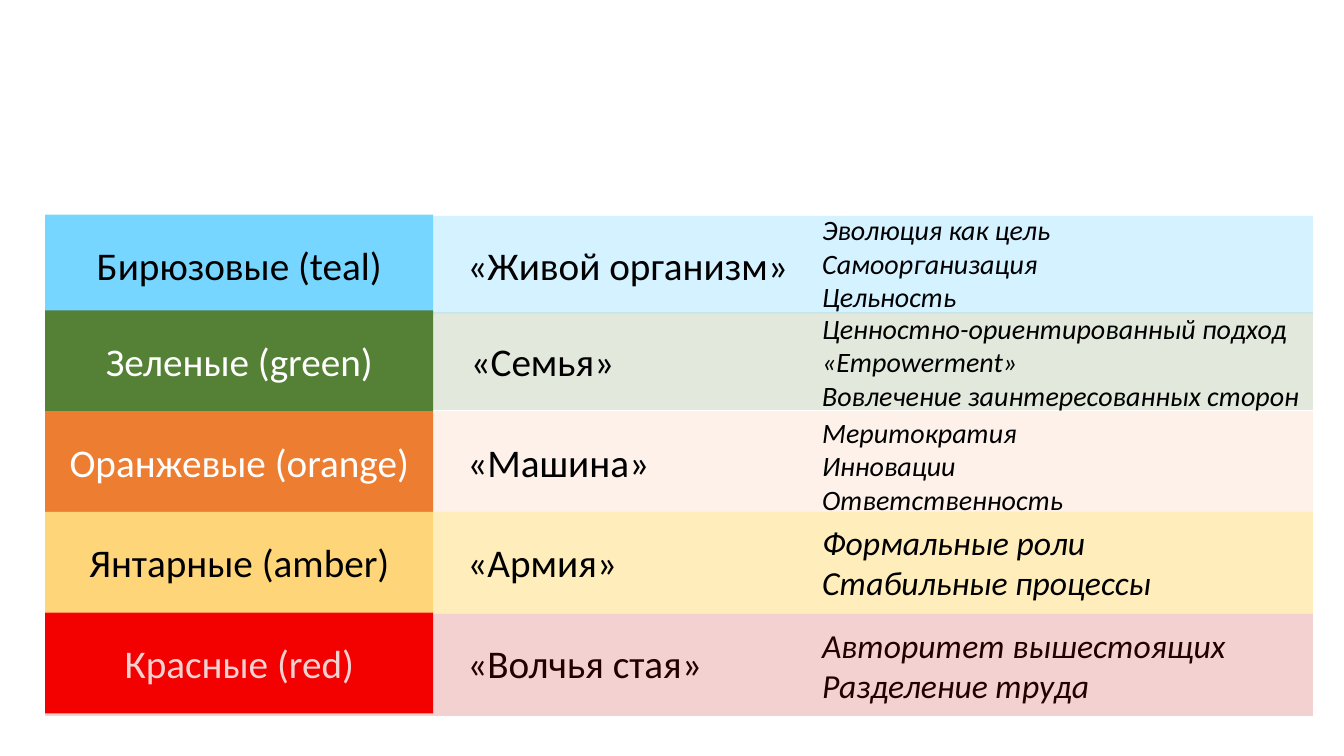
from dataclasses import dataclass

from lxml import etree
from pptx import Presentation
from pptx.dml.color import RGBColor
from pptx.enum.shapes import MSO_SHAPE
from pptx.enum.text import MSO_ANCHOR, PP_ALIGN
from pptx.oxml.ns import qn
from pptx.util import Cm, Pt

RECTANGLE = MSO_SHAPE.RECTANGLE
TOP, MIDDLE = MSO_ANCHOR.TOP, MSO_ANCHOR.MIDDLE
LEFT, CENTER = PP_ALIGN.LEFT, PP_ALIGN.CENTER
BLANK_LAYOUT = 6


@dataclass(frozen=True)
class Theme:
    font: str = "Calibri"
    dark: str = "000000"
    light: str = "FFFFFF"
    large: int = 28
    medium: int = 24
    small: int = 20


@dataclass(frozen=True)
class Stage:
    """One organisation type; lengths in cm, band is (top, height, colour, opacity)."""
    name: str
    fill: str
    ink: str
    band: tuple
    metaphor: str
    metaphor_box: tuple  # left, width
    traits: tuple
    traits_box: tuple  # top, width
    band_in_front: bool = False


THEME = Theme()
MARGIN, BAND_WIDTH = 1.14, 31.95
LABEL_WIDTH, ROW_HEIGHT = 9.78, 2.54
FIRST_TOP, SECOND_TOP = 5.41, 7.82
METAPHOR_DROP, METAPHOR_HEIGHT = 0.55, 1.45
METAPHOR_LEFT, TRAITS_LEFT = 11.53, 20.47

STAGES = [
    Stage("Бирюзовые (teal)", "76D6FF", THEME.dark, (5.44, 2.46, "76D6FF", 31),
          "«Живой организм»", (METAPHOR_LEFT, 8.69),
          ("Эволюция как цель", "Самоорганизация", "Цельность"), (5.23, 6.3)),
    Stage("Зеленые (green)", "548135", THEME.light, (7.87, 2.46, "548135", 17),
          "«Семья»", (11.61, 4.17),
          ("Ценностно-ориентированный подход", "«Empowerment»",
           "Вовлечение заинтересованных сторон"), (7.72, 12.63)),
    Stage("Оранжевые (orange)", "ED7D31", THEME.light, (10.36, 2.54, "F4B081", 17),
          "«Машина»", (METAPHOR_LEFT, 5.16),
          ("Меритократия", "Инновации", "Ответственность"), (10.34, 6.66)),
    Stage("Янтарные (amber)", "FFD579", THEME.dark, (12.9, 2.57, "FFD966", 44),
          "«Армия»", (METAPHOR_LEFT, 4.32),
          ("Формальные роли", "Стабильные процессы"), (13.03, 8.89)),
    Stage("Красные (red)", "FF0000", THEME.light, (15.47, 2.57, "C00000", 18),
          "«Волчья стая»", (METAPHOR_LEFT, 6.48),
          ("Авторитет вышестоящих", "Разделение труда"), (15.62, 10.8), True),
]


class SlideBuilder:
    def __init__(self, page, theme):
        self.page = page
        self.theme = theme
        self.shapes = page.shapes

    def start_group(self):
        self.shapes = self.page.shapes.add_group_shape().shapes

    def rectangle(self, place, color, opacity=100):
        box = self.shapes.add_shape(RECTANGLE, *map(Cm, place))
        box.shadow.inherit = False
        box.line.fill.background()
        box.fill.solid()
        box.fill.fore_color.rgb = RGBColor.from_string(color)
        if opacity < 100:
            tint = box.element.spPr.find(qn("a:solidFill"))[0]
            etree.SubElement(tint, qn("a:alpha"), val=str(opacity * 1000))
        return box

    def label(self, place, color, text, ink):
        box = self.rectangle(place, color)
        self.fill_text(box, [text], self.theme.large, ink, MIDDLE, CENTER)

    def text(self, place, lines, size, italic=False):
        box = self.shapes.add_textbox(*map(Cm, place))
        self.fill_text(box, lines, size, self.theme.dark, TOP, LEFT, italic)

    def fill_text(self, box, lines, size, ink, anchor, alignment, italic=False):
        frame = box.text_frame
        frame.word_wrap = True
        frame.vertical_anchor = anchor
        font_format = {"name": self.theme.font, "size": Pt(size), "italic": italic}
        for index, line in enumerate(lines):
            para = frame.add_paragraph() if index else frame.paragraphs[0]
            para.alignment = alignment
            span = para.add_run()
            span.text = line
            for name, value in font_format.items():
                setattr(span.font, name, value)
            span.font.color.rgb = RGBColor.from_string(ink)

    def band(self, stage):
        top, height, color, opacity = stage.band
        self.rectangle((MARGIN, top, BAND_WIDTH, height), color, opacity)

    def stage_row(self, stage, top):
        self.start_group()
        if not stage.band_in_front:
            self.band(stage)
        self.label((MARGIN, top, LABEL_WIDTH, ROW_HEIGHT),
                   stage.fill, stage.name, stage.ink)
        left, width = stage.metaphor_box
        self.text((left, top + METAPHOR_DROP, width, METAPHOR_HEIGHT),
                  [stage.metaphor], self.theme.large)
        traits_top, width = stage.traits_box
        three_lines = len(stage.traits) == 3
        size = self.theme.small if three_lines else self.theme.medium
        height = 2.82 if three_lines else 2.31
        self.text((TRAITS_LEFT, traits_top, width, height),
                  stage.traits, size, italic=True)
        if stage.band_in_front:
            self.band(stage)


def main():
    deck = Presentation()
    deck.slide_width, deck.slide_height = Cm(33.87), Cm(19.05)
    page = deck.slides.add_slide(deck.slide_layouts[BLANK_LAYOUT])
    builder = SlideBuilder(page, THEME)
    for index, stage in enumerate(STAGES):
        top = SECOND_TOP + (index - 1) * ROW_HEIGHT if index else FIRST_TOP
        builder.stage_row(stage, top)
    deck.save("out.pptx")


if __name__ == "__main__":
    main()
